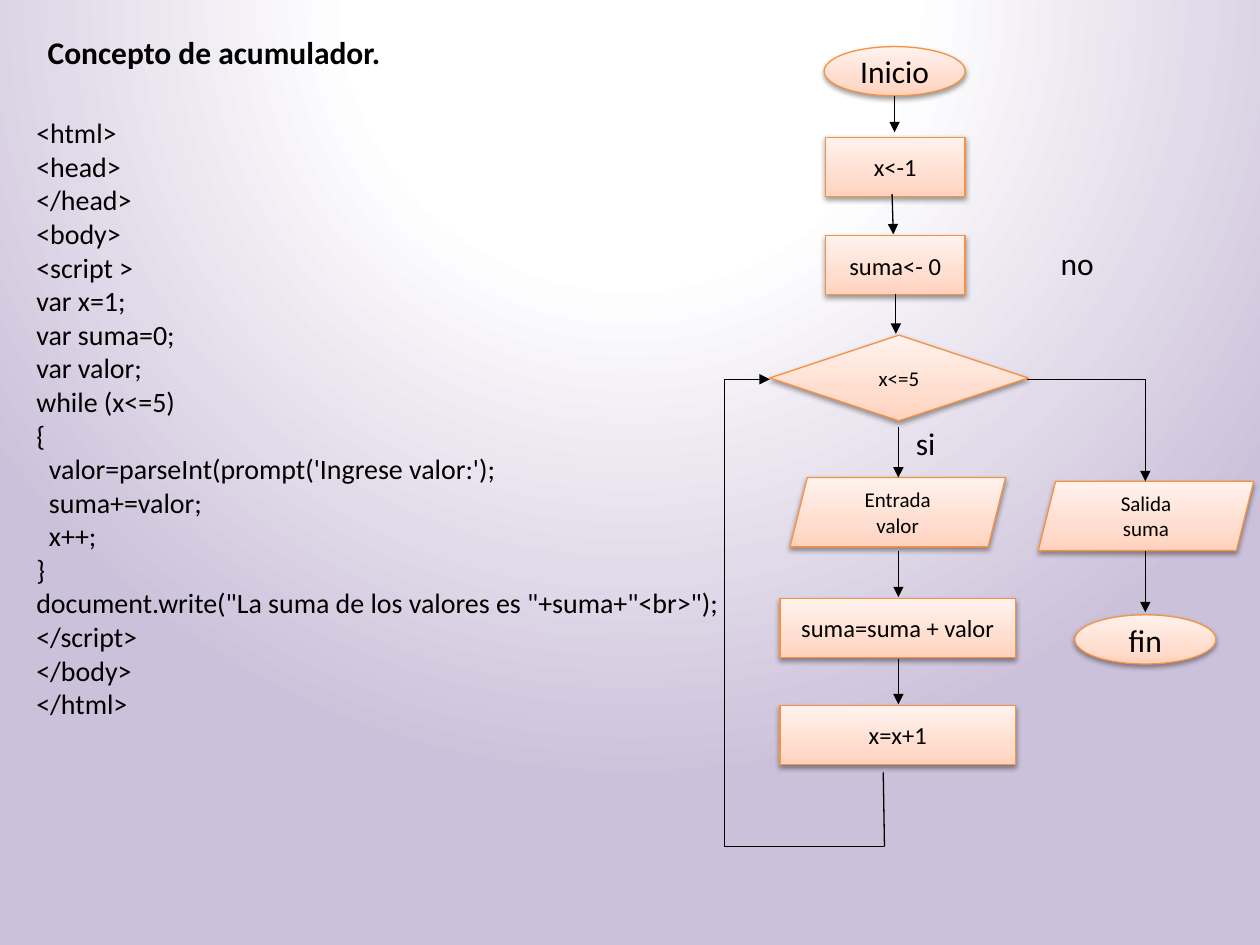
from lxml.etree import SubElement
from pptx import Presentation
from pptx.dml.color import RGBColor
from pptx.enum.shapes import MSO_CONNECTOR, MSO_SHAPE
from pptx.enum.text import MSO_ANCHOR, PP_ALIGN
from pptx.oxml.ns import qn
from pptx.util import Inches, Pt

BLACK = RGBColor(0x00, 0x00, 0x00)
ORANGE = RGBColor(0xF6, 0x92, 0x40)
WHITE = RGBColor(0xFF, 0xFF, 0xFF)
LILAC = RGBColor(0xCC, 0xC1, 0xDA)
PEACH = RGBColor(0xFF, 0xD2, 0xBD)
PEACH_MID = RGBColor(0xFF, 0xDE, 0xD0)
PEACH_LIGHT = RGBColor(0xFF, 0xF2, 0xED)

CODE = """<html>
<head>
</head>
<body>
<script >
var x=1;
var suma=0;
var valor;
while (x<=5)
{
  valor=parseInt(prompt('Ingrese valor:');
  suma+=valor;
  x++;
}
document.write("La suma de los valores es "+suma+"<br>");
</script>
</body>
</html>"""

OVAL, BOX, WIDE_BOX = (1.12, 0.39), (1.11, 0.47), (1.87, 0.47)
DIAMOND, DATA = (2.05, 0.68), (1.71, 0.55)
NODES = [
    (MSO_SHAPE.OVAL, 0.79, 0, OVAL, "Inicio", 18),
    (MSO_SHAPE.RECTANGLE, 0.8, 0.72, BOX, "x<-1", 14),
    (MSO_SHAPE.RECTANGLE, 0.8, 1.5, BOX, "suma<- 0", 14),
    (MSO_SHAPE.DIAMOND, 0.36, 2.29, DIAMOND, "x<=5", 12),
    (MSO_SHAPE.PARALLELOGRAM, 0.52, 3.42, DATA, "Entrada\nvalor", 12),
    (MSO_SHAPE.RECTANGLE, 0.44, 4.38, WIDE_BOX, "suma=suma + valor", 14),
    (MSO_SHAPE.RECTANGLE, 0.44, 5.23, WIDE_BOX, "x=x+1", 14),
    (MSO_SHAPE.PARALLELOGRAM, 2.49, 3.45, DATA, "Salida\nsuma", 12),
    (MSO_SHAPE.OVAL, 2.78, 4.51, OVAL, "fin", 18),
]
ARROWS = [
    (1.35, 0.39, 1.35, 0.68), (1.33, 1.17, 1.34, 1.49),
    (1.36, 1.96, 1.36, 2.28), (1.38, 3.02, 1.38, 3.42),
    (1.38, 4, 1.38, 4.37), (1.38, 4.86, 1.38, 5.22),
    (0, 2.64, 0.36, 2.64), (3.34, 2.64, 3.34, 3.45),
    (3.34, 4, 3.34, 4.49),
]
LINES = [
    (3.34, 2.64, 2.4, 2.64), (0, 6.35, 0, 2.64),
    (0, 6.35, 1.27, 6.35), (1.27, 6.35, 1.26, 5.76),
]


def set_gradient(solid, stops):
    """Turn a solid fill element into a gradient and return it."""
    parent = solid.getparent()
    grad = SubElement(parent, qn("a:gradFill"), rotWithShape="1")
    parent.replace(solid, grad)
    gs_list = SubElement(grad, qn("a:gsLst"))
    for pos, color in stops:
        gs = SubElement(gs_list, qn("a:gs"), pos=str(pos * 1000))
        SubElement(gs, qn("a:srgbClr"), val=str(color))
    return grad


def add_background(s):
    """Fill the slide with a glow from above its top edge."""
    s.background.fill.solid()
    grad = set_gradient(s.element.find(".//" + qn("a:solidFill")),
                        [(0, WHITE), (35, WHITE), (100, LILAC)])
    glow = SubElement(grad, qn("a:path"), path="circle")
    SubElement(glow, qn("a:fillToRect"), l="50000", t="-80000", r="50000", b="180000")


def write(tf, text, size, align=PP_ALIGN.LEFT, bold=False):
    """Write one paragraph per line, with leading spaces as an indent."""
    for i, line in enumerate(text.split("\n")):
        p = tf.paragraphs[0] if i == 0 else tf.add_paragraph()
        p.text = line.lstrip()
        p.alignment = align
        p.font.name, p.font.size, p.font.bold = "Calibri", Pt(size), bold
        p.font.color.rgb = BLACK
        if line.startswith(" "):
            p._p.get_or_add_pPr().set("marL", str(Inches(0.1)))


def add_text(s, box, text, size, wrap=False, **style):
    """Add a text box."""
    tf = s.shapes.add_textbox(*map(Inches, box)).text_frame
    tf.word_wrap = wrap
    write(tf, text, size, **style)


def add_node(s, kind, box, text, size):
    """Add a flowchart symbol with its label."""
    sp = s.shapes.add_shape(kind, *map(Inches, box))
    sp.fill.solid()
    sp.line.color.rgb, sp.line.width = ORANGE, Pt(0.75)
    sp.shadow.inherit = False
    props = sp.element.spPr
    grad = set_gradient(props.find(qn("a:solidFill")),
                        [(0, PEACH), (35, PEACH_MID), (100, PEACH_LIGHT)])
    SubElement(grad, qn("a:lin"), ang="16200000", scaled="1")
    shadow = SubElement(props.find(qn("a:effectLst")), qn("a:outerShdw"),
                        blurRad=str(Pt(3.1)), dist=str(Pt(1.6)),
                        dir="5400000", rotWithShape="0")
    color = SubElement(shadow, qn("a:srgbClr"), val=str(BLACK))
    SubElement(color, qn("a:alpha"), val="38000")
    sp.text_frame.vertical_anchor = MSO_ANCHOR.MIDDLE
    write(sp.text_frame, text, size, align=PP_ALIGN.CENTER)


def add_line(s, ends, arrow):
    """Add a thin black line, with an arrowhead if asked."""
    c = s.shapes.add_connector(MSO_CONNECTOR.STRAIGHT, *map(Inches, ends))
    c.line.color.rgb, c.line.width = BLACK, Pt(0.75)
    if arrow:
        SubElement(c.line._get_or_add_ln(), qn("a:tailEnd"), type="triangle")
    SubElement(c._element.spPr, qn("a:effectLst"))


def add_flowchart(s, left, top):
    """Draw the flowchart from its top left corner."""
    for kind, x, y, size, text, points in NODES:
        add_node(s, kind, (left + x, top + y, *size), text, points)
    for lines, arrow in ((LINES, False), (ARROWS, True)):
        for x1, y1, x2, y2 in lines:
            add_line(s, (left + x1, top + y1, left + x2, top + y2), arrow)
    add_text(s, (left + 1.42, top + 2.95, 0.39, 0.4), "si", 18)
    add_text(s, (left + 2.57, top + 1.52, 0.56, 0.4), "no", 18)


def main():
    """Build and save the slide."""
    prs = Presentation()
    prs.slide_width, prs.slide_height = Inches(10), Inches(7.5)
    s = prs.slides.add_slide(prs.slide_layouts[6])
    add_background(s)
    add_text(s, (0.28, 0.21, 2.86, 0.4), "Concepto de acumulador.", 18, bold=True)
    add_text(s, (0.19, 0.87, 6.38, 4.95), CODE, 16, wrap=True, align=PP_ALIGN.JUSTIFY)
    add_flowchart(s, 5.75, 0.37)
    prs.save("out.pptx")


if __name__ == "__main__":
    main()
